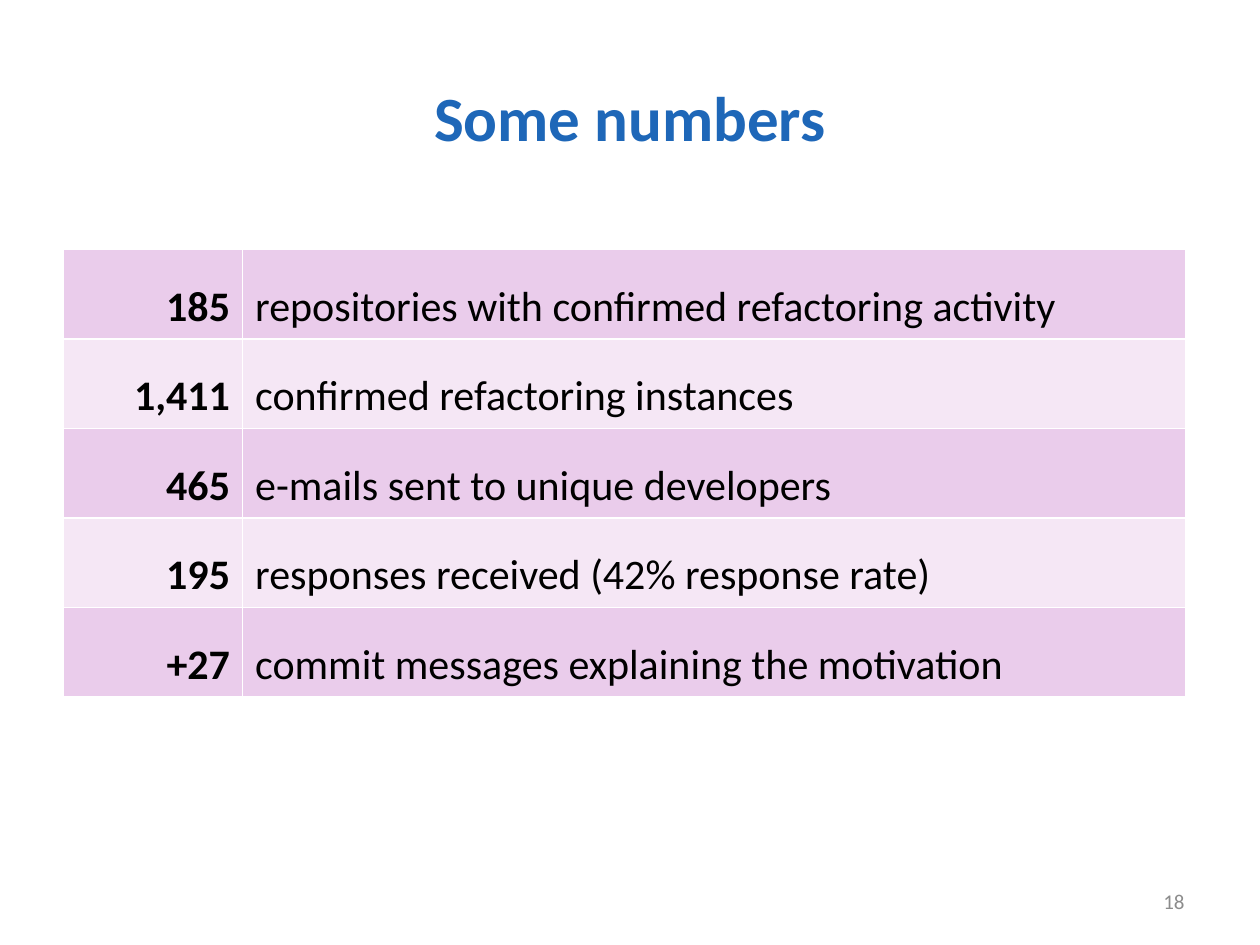
from pptx import Presentation
from pptx import util as u
from pptx.dml import color
from pptx.enum import text
from pptx.oxml import ns
from lxml import etree

BLUE = color.RGBColor(0x1E, 0x67, 0xB8)
BLACK = color.RGBColor(0, 0, 0)
GREY = color.RGBColor(0x8C, 0x8C, 0x8C)
WHITE = color.RGBColor(0xFF, 0xFF, 0xFF)
BANDS = (color.RGBColor(0xEA, 0xCC, 0xEB), color.RGBColor(0xF5, 0xE7, 0xF5))

NUMBERS = (
    ("185", "repositories with confirmed refactoring activity"),
    ("1,411", "confirmed refactoring instances"),
    ("465", "e-mails sent to unique developers"),
    ("195", "responses received (42% response rate)"),
    ("+27", "commit messages explaining the motivation"),
)
COLUMN_SHARES = (0.16, 0.84)


def set_attributes(target, values):
    for name, value in values.items():
        setattr(target, name, value)


def write(frame, words, size, colour, bold, align, spacing=1.0):
    frame.text = words
    paragraph = frame.paragraphs[0]
    set_attributes(paragraph, {"alignment": align, "line_spacing": spacing})
    font = paragraph.runs[0].font
    set_attributes(font, {"name": "Calibri", "size": u.Pt(size), "bold": bold})
    font.color.rgb = colour


def add_borders(cell, colour, width):
    properties = cell._tc.get_or_add_tcPr()
    for side in ("a:lnL", "a:lnR", "a:lnT", "a:lnB"):
        line = etree.SubElement(properties, ns.qn(side), w=str(u.Pt(width)))
        fill = etree.SubElement(line, ns.qn("a:solidFill"))
        etree.SubElement(fill, ns.qn("a:srgbClr"), val=str(colour))


def place_title(slide, left, top, width, height):
    title = slide.shapes.title
    set_attributes(title, {"left": left, "top": top, "width": width, "height": height})
    title.text_frame.vertical_anchor = text.MSO_ANCHOR.MIDDLE
    write(title.text_frame, "Some numbers", 36, BLUE, True, text.PP_ALIGN.CENTER)


def place_numbers_table(slide, left, top, width, height):
    frame = slide.shapes.add_table(len(NUMBERS), 2, left, top, width, height)
    table = frame.table
    set_attributes(table, {"first_row": False, "horz_banding": False})
    for column, share in zip(table.columns, COLUMN_SHARES):
        column.width = int(width * share)
    aligns = (text.PP_ALIGN.RIGHT, text.PP_ALIGN.LEFT)
    for row, entry in enumerate(NUMBERS):
        for column, words in enumerate(entry):
            cell = table.cell(row, column)
            write(cell.text_frame, words, 24, BLACK, column == 0, aligns[column], 1.5)
            add_borders(cell, WHITE, 1)
            cell.fill.solid()
            cell.fill.fore_color.rgb = BANDS[row % 2]


def place_slide_number(slide, left, top, width, height):
    frame = slide.shapes.add_textbox(left, top, width, height).text_frame
    set_attributes(frame, {"word_wrap": True, "vertical_anchor": text.MSO_ANCHOR.MIDDLE})
    write(frame, "18", 12, GREY, False, text.PP_ALIGN.RIGHT)


def main():
    presentation = Presentation()
    set_attributes(presentation, {"slide_width": u.Inches(10), "slide_height": u.Inches(7.5)})
    slide = presentation.slides.add_slide(presentation.slide_layouts[5])
    regions = (
        (place_title, (0.5, 0.3, 9, 1.25)),
        (place_numbers_table, (0.5, 1.98, 8.91, 3.5)),
        (place_slide_number, (7.17, 6.95, 2.33, 0.4)),
    )
    for place, box in regions:
        place(slide, *map(u.Inches, box))
    presentation.save("out.pptx")


if __name__ == "__main__":
    main()
